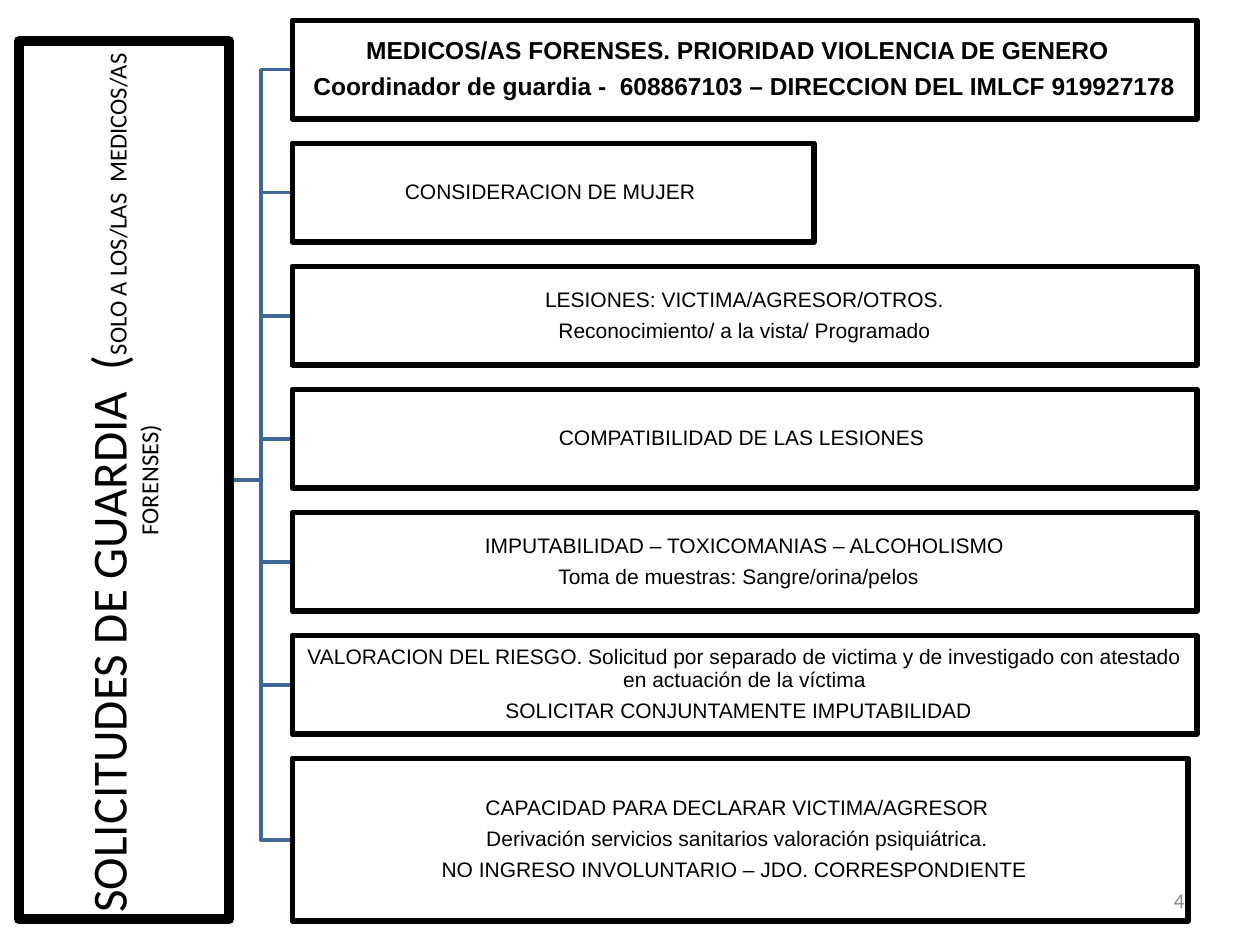
from pptx import Presentation
from pptx.dml.color import RGBColor
from pptx.enum.shapes import MSO_SHAPE
from pptx.enum.text import MSO_ANCHOR, PP_ALIGN
from pptx.util import Cm, Pt

HUES = {"ink": "000000", "link": "3F6797", "page": "8C8C8C"}

LEFT, TOP, STEP = 5.89, 0.41, 2.48
WIDE, HIGH = 18.24, 1.99
ROOT_X, ROOT_Y = 2.5, 9.68
ROOT_W, ROOT_H = 17.7, 4.24
START, BEND = 4.6, 5.26

TITLE = [[("SOLICITUDES DE GUARDIA  (", 28),
          ("SOLO A LOS/LAS  MEDICOS/AS  FORENSES)", 14)]]

# Lines of text, then whatever differs from the usual box
ROWS = [
    (["MEDICOS/AS FORENSES. PRIORIDAD VIOLENCIA DE GENERO  ",
      "Coordinador de guardia -  608867103 – DIRECCION DEL IMLCF 919927178"],
     {"size": 14, "bold": True}),
    (["CONSIDERACION DE MUJER "], {"wide": 10.52}),
    (["LESIONES: VICTIMA/AGRESOR/OTROS.",
      " Reconocimiento/ a la vista/ Programado "], {}),
    (["COMPATIBILIDAD DE LAS LESIONES "], {}),
    (["IMPUTABILIDAD – TOXICOMANIAS – ALCOHOLISMO",
      "Toma de muestras: Sangre/orina/pelos  "], {}),
    (["VALORACION DEL RIESGO. Solicitud por separado de victima y de "
      "investigado con atestado en actuación de la víctima",
      "SOLICITAR CONJUNTAMENTE IMPUTABILIDAD  "], {}),
    (["CAPACIDAD PARA DECLARAR VICTIMA/AGRESOR ",
      "Derivación servicios sanitarios valoración psiquiátrica. ",
      "NO INGRESO INVOLUNTARIO – JDO. CORRESPONDIENTE  "],
     {"wide": 18.06, "high": 3.28}),
]


def tint(name):
    return RGBColor.from_string(HUES[name])


def put_text(shape, paras, font="Arial", hue="ink", bold=False,
             align=PP_ALIGN.CENTER, inset=0.03, space=0.9):
    """Fill a shape with paragraphs, each a list of (text, size) runs."""
    frame = shape.text_frame
    frame.word_wrap = True
    frame.vertical_anchor = MSO_ANCHOR.MIDDLE
    frame.margin_left = frame.margin_right = Cm(inset)
    frame.margin_top = frame.margin_bottom = Cm(inset)
    for i, runs in enumerate(paras):
        para = frame.add_paragraph() if i else frame.paragraphs[0]
        para.alignment = align
        para.line_spacing = space
        if space < 1:
            para.space_after = Pt(round(0.4 * max(size for _, size in runs), 1))
        for text, size in runs:
            run = para.add_run()
            run.text = text
            run.font.name = font
            run.font.size = Pt(size)
            run.font.bold = bold
            run.font.color.rgb = tint(hue)


def set_line(shape, hue, width):
    shape.shadow.inherit = False
    shape.fill.background()
    shape.line.color.rgb = tint(hue)
    shape.line.width = Pt(width)


def add_box(slide, x, y, wide, high, line):
    box = slide.shapes.add_shape(MSO_SHAPE.RECTANGLE,
                                 Cm(x), Cm(y), Cm(wide), Cm(high))
    set_line(box, "ink", line)
    return box


def add_link(slide, y):
    """Draw the elbow from the root box to a row centred on y."""
    path = slide.shapes.build_freeform(Cm(START), Cm(ROOT_Y))
    path.add_line_segments([(Cm(BEND), Cm(ROOT_Y)), (Cm(BEND), Cm(y)),
                            (Cm(LEFT), Cm(y))], close=False)
    set_line(path.convert_to_shape(), "link", 2)


def add_root(slide):
    box = add_box(slide, ROOT_X - ROOT_W / 2, ROOT_Y - ROOT_H / 2,
                  ROOT_W, ROOT_H, 6)
    box.rotation = 270
    put_text(box, TITLE, font="Calibri", inset=0.05)


def add_row(slide, y, lines, wide=WIDE, high=HIGH, size=12, bold=False):
    box = add_box(slide, LEFT, y, wide, high, 3)
    put_text(box, [[(line, size)] for line in lines], bold=bold)


def add_page(slide):
    box = slide.shapes.add_textbox(Cm(18.2), Cm(17.65), Cm(5.93), Cm(1.01))
    put_text(box, [[("4", 12)]], font="Calibri", hue="page",
             align=PP_ALIGN.RIGHT, inset=0.25, space=1.0)


def main():
    deck = Presentation()
    deck.slide_width, deck.slide_height = Cm(25.4), Cm(19.05)
    slide = deck.slides.add_slide(deck.slide_layouts[6])
    add_page(slide)
    tops = [TOP + STEP * i for i in range(len(ROWS))]
    for y, (_, style) in zip(tops, ROWS):
        add_link(slide, y + style.get("high", HIGH) / 2)
    add_root(slide)
    for y, (lines, style) in zip(tops, ROWS):
        add_row(slide, y, lines, **style)
    deck.save("out.pptx")


if __name__ == "__main__":
    main()
